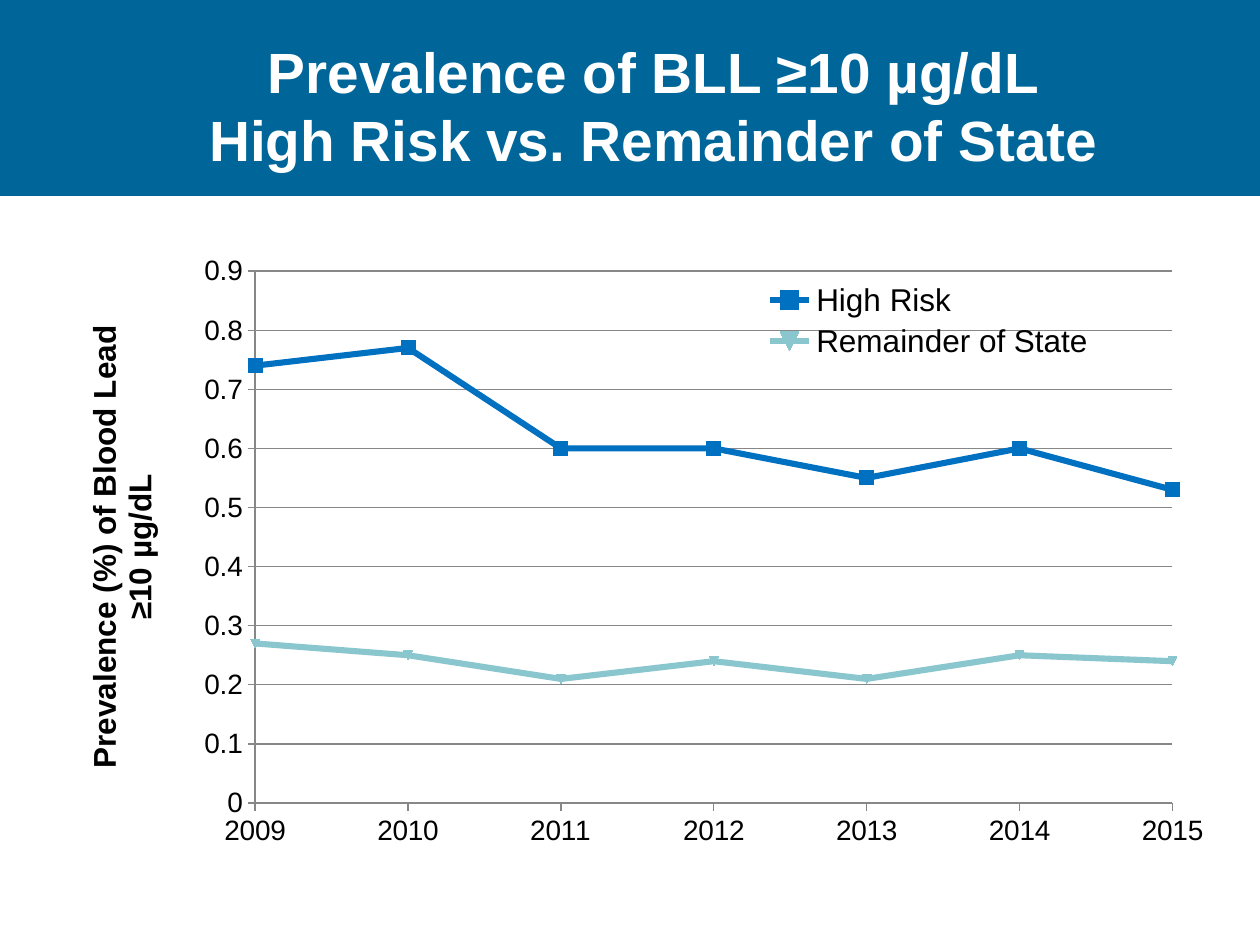
import pptx
import pptx.chart.data
import pptx.dml.color
import pptx.enum.chart
import pptx.enum.shapes
import pptx.enum.text
import pptx.oxml
import pptx.oxml.ns
import pptx.util

Pt = pptx.util.Pt
COLORS = {"band": "006699", "white": "FFFFFF", "black": "000000",
          "axis": "878787", "High Risk": "0070C0", "Remainder of State": "8AC6CD"}
YEARS = range(2009, 2016)
PREVALENCE = {
    "High Risk": [0.74, 0.77, 0.6, 0.6, 0.55, 0.6, 0.53],
    "Remainder of State": [0.27, 0.25, 0.21, 0.24, 0.21, 0.25, 0.24],
}
FONT = "Arial"


def rgb(name):
    """Return the named colour."""
    return pptx.dml.color.RGBColor.from_string(COLORS[name])


def set_font(font, size, color="black", bold=False):
    """Apply size, colour and weight to a font."""
    font.name, font.size, font.bold = FONT, Pt(size), bold
    font.color.rgb = rgb(color)


def set_layout(element, index, **fractions):
    """Give a chart part a manual layout in fractions of the chart."""
    for old in element.findall(pptx.oxml.ns.qn("c:layout")):
        element.remove(old)
    target = '<c:layoutTarget val="inner"/>' if "plotArea" in element.tag else ""
    modes = '<c:xMode val="edge"/><c:yMode val="edge"/>'
    sizes = "".join(f'<c:{key} val="{value}"/>' for key, value in fractions.items())
    element.insert(index, pptx.oxml.parse_xml(
        f'<c:layout {pptx.oxml.ns.nsdecls("c")}><c:manualLayout>'
        f"{target}{modes}{sizes}</c:manualLayout></c:layout>"))


def add_band(slide):
    """Place the header band behind everything else."""
    band = slide.shapes.add_shape(
        pptx.enum.shapes.MSO_SHAPE.RECTANGLE, Pt(0), Pt(0), Pt(721.5), Pt(112))
    band.shadow.inherit = False
    band.fill.solid()
    band.fill.fore_color.rgb = rgb("band")
    band.line.fill.background()
    slide.shapes._spTree.insert(2, band._element)


def add_title(slide, lines):
    """Fill the title placeholder with centred lines."""
    title = slide.shapes.title
    title.left, title.top, title.width, title.height = Pt(49.5), Pt(16), Pt(648), Pt(88)
    frame = title.text_frame
    frame.word_wrap = True
    frame.auto_size = pptx.enum.text.MSO_AUTO_SIZE.NONE
    frame.vertical_anchor = pptx.enum.text.MSO_ANCHOR.MIDDLE
    heading = frame.paragraphs[0]
    heading.alignment = pptx.enum.text.PP_ALIGN.CENTER
    for number, line in enumerate(lines):
        if number:
            heading.add_line_break()
        run = heading.add_run()
        run.text = line
        set_font(run.font, 32.4, "white", True)


def style_axis(axis, low, high, step):
    """Scale an axis and set its ticks, labels and line."""
    axis.minimum_scale, axis.maximum_scale, axis.major_unit = low, high, step
    axis.major_tick_mark = pptx.enum.chart.XL_TICK_MARK.OUTSIDE
    axis.minor_tick_mark = pptx.enum.chart.XL_TICK_MARK.NONE
    axis.tick_labels.number_format = "General"
    axis.tick_labels.number_format_is_linked = False
    axis.has_major_gridlines = False
    set_font(axis.tick_labels.font, 16)
    axis.format.line.color.rgb = rgb("axis")
    axis.format.line.width = Pt(0.75)


def add_axis_title(axis, lines):
    """Write a rotated bold title beside the value axis."""
    frame = axis.axis_title.text_frame
    frame._txBody.bodyPr.set("rot", "-5400000")
    frame._txBody.bodyPr.set("vert", "horz")
    for number, line in enumerate(lines):
        paragraph = frame.add_paragraph() if number else frame.paragraphs[0]
        paragraph.alignment = pptx.enum.text.PP_ALIGN.CENTER
        run = paragraph.add_run()
        run.text = line
        set_font(run.font, 18, bold=True)
    set_layout(axis.axis_title._element, 1, x=0.03, y=0.127)


def style_series(series, marker, size):
    """Draw a series as a smooth line with filled markers."""
    color = rgb(series.name)
    series.smooth = True
    series.format.line.color.rgb = color
    series.format.line.width = Pt(3.5)
    series.marker.style, series.marker.size = marker, size
    series.marker.format.fill.solid()
    series.marker.format.fill.fore_color.rgb = color
    series.marker.format.line.color.rgb = color


def add_prevalence_chart(slide):
    """Plot the yearly prevalence of both areas."""
    data = pptx.chart.data.XyChartData()
    for area, rates in PREVALENCE.items():
        points = data.add_series(area)
        for year, rate in zip(YEARS, rates):
            points.add_data_point(year, rate)
    chart = slide.shapes.add_chart(
        pptx.enum.chart.XL_CHART_TYPE.XY_SCATTER_SMOOTH,
        Pt(26), Pt(135.5), Pt(673), Pt(381.5), data).chart
    set_font(chart.font, 18)
    chart.has_title = False
    plot = chart.plots[0]
    plot.vary_by_categories = False
    set_layout(chart._chartSpace.chart.plotArea, 0, x=0.178, y=0.051, w=0.779, h=0.797)

    style_axis(chart.category_axis, YEARS[0], YEARS[-1], 1)
    rate_axis = chart.value_axis
    style_axis(rate_axis, 0, 0.9, 0.1)
    rate_axis.has_major_gridlines = True
    rate_axis.major_gridlines.format.line.color.rgb = rgb("axis")
    rate_axis.major_gridlines.format.line.width = Pt(0.75)
    add_axis_title(rate_axis, ["Prevalence (%) of Blood Lead", "≥10 µg/dL"])

    high_risk, remainder = plot.series
    markers = pptx.enum.chart.XL_MARKER_STYLE
    style_series(high_risk, markers.SQUARE, 8)
    style_series(remainder, markers.AUTOMATIC, 5)
    remainder._element.idx.val = 2

    chart.has_legend = True
    chart.legend.position = pptx.enum.chart.XL_LEGEND_POSITION.RIGHT
    chart.legend.include_in_layout = True
    set_font(chart.legend.font, 18)
    set_layout(chart.legend._element, 1, x=0.6, y=0.06, w=0.3, h=0.13)


def main():
    """Build and save the slide."""
    deck = pptx.Presentation()
    deck.slide_width, deck.slide_height = Pt(720), Pt(540)
    slide = deck.slides.add_slide(deck.slide_layouts[5])
    add_band(slide)
    add_title(slide, ["Prevalence of BLL ≥10 µg/dL", "High Risk vs. Remainder of State"])
    add_prevalence_chart(slide)
    deck.save("out.pptx")


if __name__ == "__main__":
    main()
